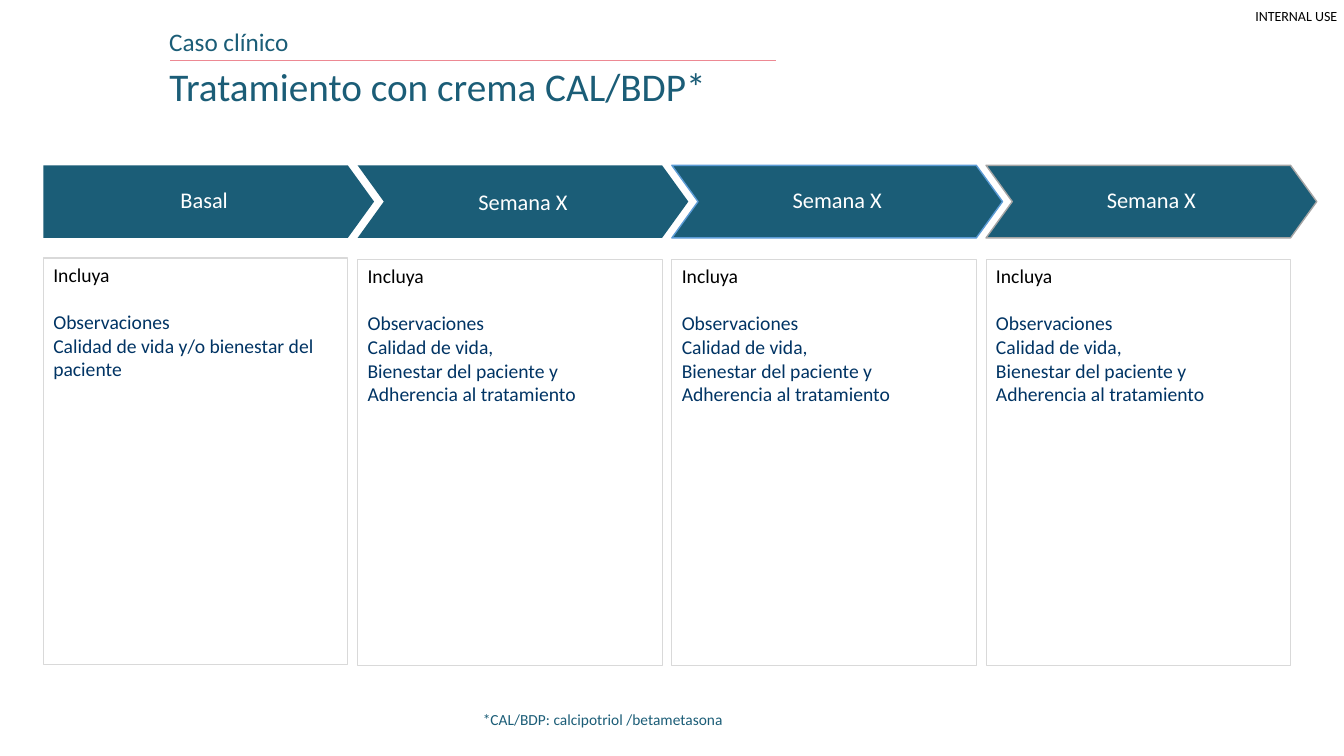
from dataclasses import dataclass

from lxml.etree import SubElement
from pptx import Presentation
from pptx.dml.color import RGBColor
from pptx.enum.shapes import MSO_CONNECTOR, MSO_SHAPE
from pptx.enum.text import MSO_ANCHOR, MSO_AUTO_SIZE, PP_ALIGN
from pptx.oxml.ns import qn
from pptx.util import Inches, Pt


@dataclass(frozen=True)
class Theme:
    font: str = "Calibri"
    teal: str = "1B5D77"
    navy: str = "013464"
    black: str = "000000"
    white: str = "FFFFFF"
    pink: str = "ED8993"
    blue: str = "5B9BD5"
    grey: str = "A5A5A5"
    border: str = "D9D9D9"
    title: int = 28
    kicker: int = 18
    step: int = 16
    body: int = 14
    note: int = 11
    label: int = 10


class SlideBuilder:
    def __init__(self, prs, theme):
        self.theme = theme
        self.slide = prs.slides.add_slide(prs.slide_layouts[5])

    def style(self, p, size, color):
        p.font.name = self.theme.font
        p.font.size = Pt(size)
        p.font.color.rgb = RGBColor.from_string(color)

    def outline(self, shape, color, width):
        shape.line.color.rgb = RGBColor.from_string(color)
        shape.line.width = Pt(width)

    def insets(self, tf, left, top, right, bottom):
        tf.margin_left, tf.margin_right = Inches(left), Inches(right)
        tf.margin_top, tf.margin_bottom = Inches(top), Inches(bottom)

    def title(self, text, x, y, w, h):
        sp = self.slide.shapes.title
        sp.left, sp.top, sp.width, sp.height = map(Inches, (x, y, w, h))
        tf = sp.text_frame
        tf.text = text
        tf.auto_size = MSO_AUTO_SIZE.NONE
        tf.vertical_anchor = MSO_ANCHOR.TOP
        p = tf.paragraphs[0]
        p.alignment = PP_ALIGN.LEFT
        self.style(p, self.theme.title, self.theme.teal)

    def text(self, text, x, y, w, h, size, color, spacing=1.0, inset=True):
        sp = self.slide.shapes.add_textbox(*map(Inches, (x, y, w, h)))
        tf = sp.text_frame
        tf.word_wrap = True
        if not inset:
            self.insets(tf, 0, 0, 0, 0)
        p = tf.paragraphs[0]
        p.text = text
        p.line_spacing = spacing
        self.style(p, size, color)

    def rule(self, x1, x2, y):
        line = self.slide.shapes.add_connector(
            MSO_CONNECTOR.STRAIGHT, *map(Inches, (x1, y, x2, y)))
        self.outline(line, self.theme.pink, 0.5)
        SubElement(line._element.spPr, qn("a:effectLst"))

    def arrow(self, text, x, notched, line, spacing):
        """Draw a timeline step; all but the first have a notch on the left."""
        top, middle, bottom = 1.64, 2, 2.36
        shoulder, tip, notch = x + 3.02, x + 3.28, x + 0.26
        points = [(shoulder, top), (tip, middle), (shoulder, bottom), (x, bottom)]
        if notched:
            points.append((notch, middle))
        fb = self.slide.shapes.build_freeform(Inches(x), Inches(top))
        fb.add_line_segments([(Inches(a), Inches(b)) for a, b in points])
        sp = fb.convert_to_shape()
        sp.shadow.inherit = False
        sp.fill.solid()
        sp.fill.fore_color.rgb = RGBColor.from_string(self.theme.teal)
        if line:
            self.outline(sp, line, 1)
        else:
            sp.line.fill.background()
        tf = sp.text_frame
        tf.word_wrap = True
        tf.vertical_anchor = MSO_ANCHOR.MIDDLE
        self.insets(tf, *((0.29, 0.22, 0.29, 0.22) if notched
                          else (0.11, 0.22, 0.2, 0.22)))
        p = tf.paragraphs[0]
        p.text = text
        p.alignment = PP_ALIGN.CENTER
        p.line_spacing = spacing
        self.style(p, self.theme.step, self.theme.white)

    def panel(self, heading, lines, x, y):
        sp = self.slide.shapes.add_shape(
            MSO_SHAPE.RECTANGLE, *map(Inches, (x, y, 3.02, 4.03)))
        sp.shadow.inherit = False
        sp.fill.background()
        self.outline(sp, self.theme.border, 0.75)
        tf = sp.text_frame
        tf.word_wrap = True
        tf.vertical_anchor = MSO_ANCHOR.TOP
        tf.text = "\n".join([heading, *lines])
        for i, p in enumerate(tf.paragraphs):
            p.alignment = PP_ALIGN.LEFT
            self.style(p, self.theme.body,
                       self.theme.navy if i else self.theme.black)
        tf.paragraphs[0].space_after = Pt(17)


def main():
    prs = Presentation()
    prs.slide_width, prs.slide_height = Inches(13.33), Inches(7.5)
    theme = Theme()
    s = SlideBuilder(prs, theme)

    s.text("*CAL/BDP: calcipotriol /betametasona", 4.69, 7, 6.66, 0.29,
           theme.note, theme.teal)
    s.text("INTERNAL USE", 12.45, 0.07, 0.85, 0.17,
           theme.label, theme.black, inset=False)
    s.text("Caso clínico", 1.58, 0.25, 7.7, 0.62,
           theme.kicker, theme.teal, spacing=0.9)
    s.title("Tratamiento con crema CAL/BDP*", 1.58, 0.57, 6.24, 0.57)
    s.rule(1.69, 7.7, 0.6)

    baseline = ["Observaciones", "Calidad de vida y/o bienestar del paciente"]
    follow_up = ["Observaciones", "Calidad de vida,",
                 "Bienestar del paciente y", "Adherencia al tratamiento"]
    steps = [
        ("Basal", baseline, None, 0.9, 2.56),
        ("Semana X", follow_up, None, 1.0, 2.57),
        ("Semana X", follow_up, theme.blue, 0.9, 2.57),
        ("Semana X", follow_up, theme.grey, 0.9, 2.57),
    ]
    first, last = 0.43, 9.78
    pitch = (last - first) / (len(steps) - 1)
    for i, (name, lines, line, spacing, panel_top) in enumerate(steps):
        x = first + i * pitch
        s.arrow(name, x, i > 0, line, spacing)
        s.panel("Incluya", lines, x, panel_top)

    prs.save("out.pptx")


if __name__ == "__main__":
    main()
